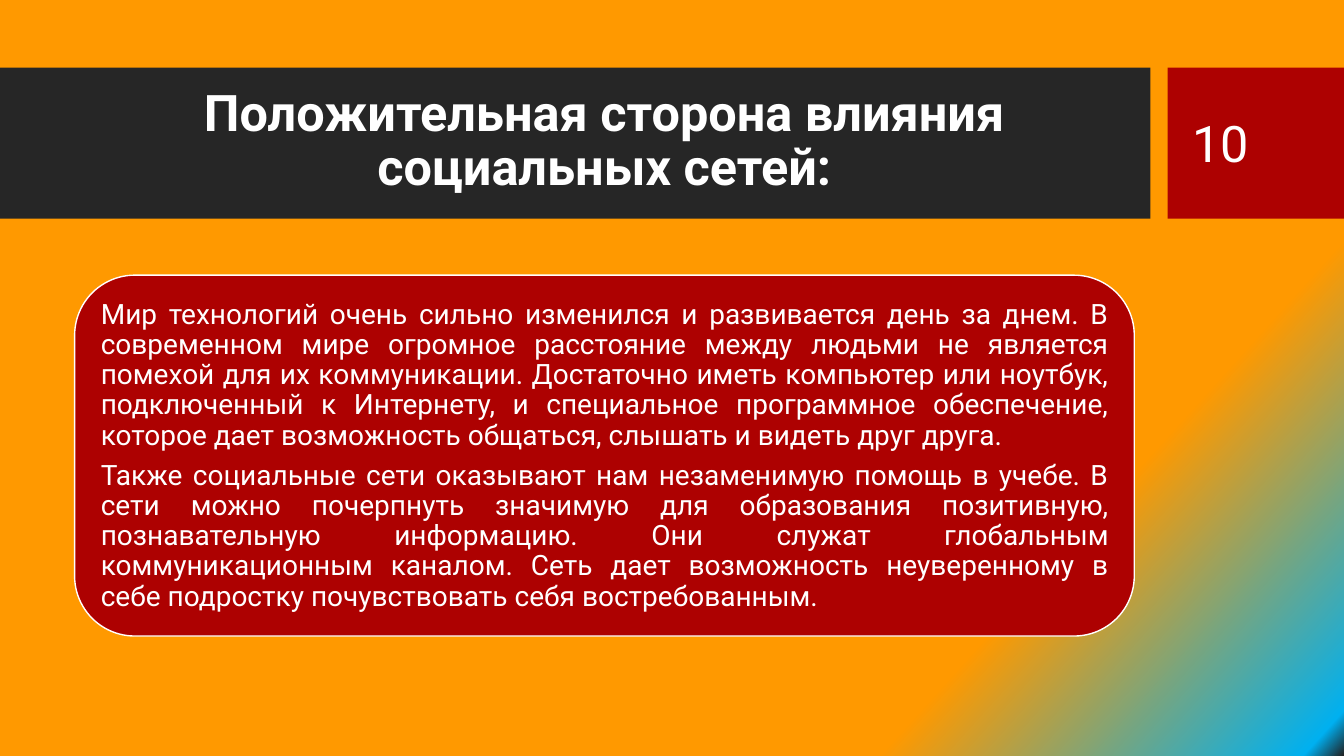
from copy import deepcopy

from pptx import Presentation
from pptx.dml.color import RGBColor
from pptx.enum.shapes import MSO_SHAPE
from pptx.enum.text import MSO_ANCHOR, PP_ALIGN
from pptx.oxml.ns import qn
from pptx.util import Inches, Pt

RECT = MSO_SHAPE.RECTANGLE
ROUNDED = MSO_SHAPE.ROUNDED_RECTANGLE
MIDDLE = MSO_ANCHOR.MIDDLE
LEFT, CENTER, JUSTIFY = PP_ALIGN.LEFT, PP_ALIGN.CENTER, PP_ALIGN.JUSTIFY

WHITE = RGBColor(0xFF, 0xFF, 0xFF)
ORANGE = RGBColor(0xFF, 0x99, 0x00)
BLUE = RGBColor(0x00, 0xB0, 0xF0)
BLACK = RGBColor(0x22, 0x22, 0x22)
DARK = RGBColor(0x26, 0x26, 0x26)
RED = RGBColor(0xAD, 0x01, 0x01)

TITLE = "Положительная сторона влияния социальных сетей:"
BODY = [
    "Мир технологий очень сильно изменился и развивается день за днем. "
    "В современном мире огромное расстояние между людьми не является помехой "
    "для их коммуникации. Достаточно иметь компьютер или ноутбук, подключенный "
    "к Интернету, и специальное программное обеспечение, которое дает "
    "возможность общаться, слышать и видеть друг друга.",
    "Также социальные сети оказывают нам незаменимую помощь в учебе. В сети "
    "можно почерпнуть значимую для образования позитивную, познавательную "
    "информацию. Они служат глобальным коммуникационным каналом. Сеть дает "
    "возможность неуверенному в себе подростку почувствовать себя "
    "востребованным.",
]


class SlideBuilder:
    """Draws styled elements on the current slide."""

    font = "Roboto"
    color = WHITE

    def __init__(self, s):
        self.s = s

    def background(self, stops, angle):
        fill = self.s.background.fill
        fill.gradient()
        fill.gradient_angle = 360 - angle
        gs_list = self.s.element.find(".//" + qn("a:gsLst"))
        while len(gs_list) < len(stops):
            gs_list.append(deepcopy(gs_list[0]))
        for stop, (position, color) in zip(fill.gradient_stops, stops):
            stop.position = position
            stop.color.rgb = color

    def box(self, kind, x, y, w, h, fill, line=None):
        sp = self.s.shapes.add_shape(kind, Inches(x), Inches(y), Inches(w), Inches(h))
        sp.shadow.inherit = False
        sp.fill.solid()
        sp.fill.fore_color.rgb = fill
        if line is None:
            sp.line.fill.background()
        else:
            sp.line.color.rgb = line
            sp.line.width = Pt(1)

    def text(self, paragraphs, x, y, w, h, size, align=LEFT, bold=False,
             spacing=1.0, after=0, inset=None):
        sp = self.s.shapes.add_textbox(Inches(x), Inches(y), Inches(w), Inches(h))
        tf = sp.text_frame
        tf.word_wrap = True
        tf.vertical_anchor = MIDDLE
        if inset is not None:
            tf.margin_left = tf.margin_right = Inches(inset)
            tf.margin_top = tf.margin_bottom = Inches(inset)
        for i, words in enumerate(paragraphs):
            p = tf.add_paragraph() if i else tf.paragraphs[0]
            p.text = words
            p.alignment = align
            p.line_spacing = spacing
            p.space_after = Pt(after)
            p.font.name = self.font
            p.font.size = Pt(size)
            p.font.bold = bold
            p.font.color.rgb = self.color


def main():
    prs = Presentation()
    prs.slide_width, prs.slide_height = Inches(13.33), Inches(7.5)
    slide = SlideBuilder(prs.slides.add_slide(prs.slide_layouts[6]))

    slide.background([(0.77, ORANGE), (0.98, BLUE), (1.0, BLACK)], 42)
    slide.box(RECT, 0, 0.67, 11.41, 1.5, DARK)
    slide.box(RECT, 11.58, 0.67, 1.75, 1.5, RED)
    slide.text([TITLE], 0.74, 0.82, 10.51, 1.18, 36, CENTER, bold=True, spacing=0.9)
    slide.box(ROUNDED, 0.74, 2.73, 10.51, 3.58, RED, WHITE)
    slide.text(BODY, 0.92, 2.91, 10.16, 3.23, 20, JUSTIFY, spacing=0.9,
               after=7, inset=0.08)
    slide.text(["10"], 11.73, 0.82, 1.26, 1.19, 36)

    prs.save("out.pptx")


if __name__ == "__main__":
    main()
